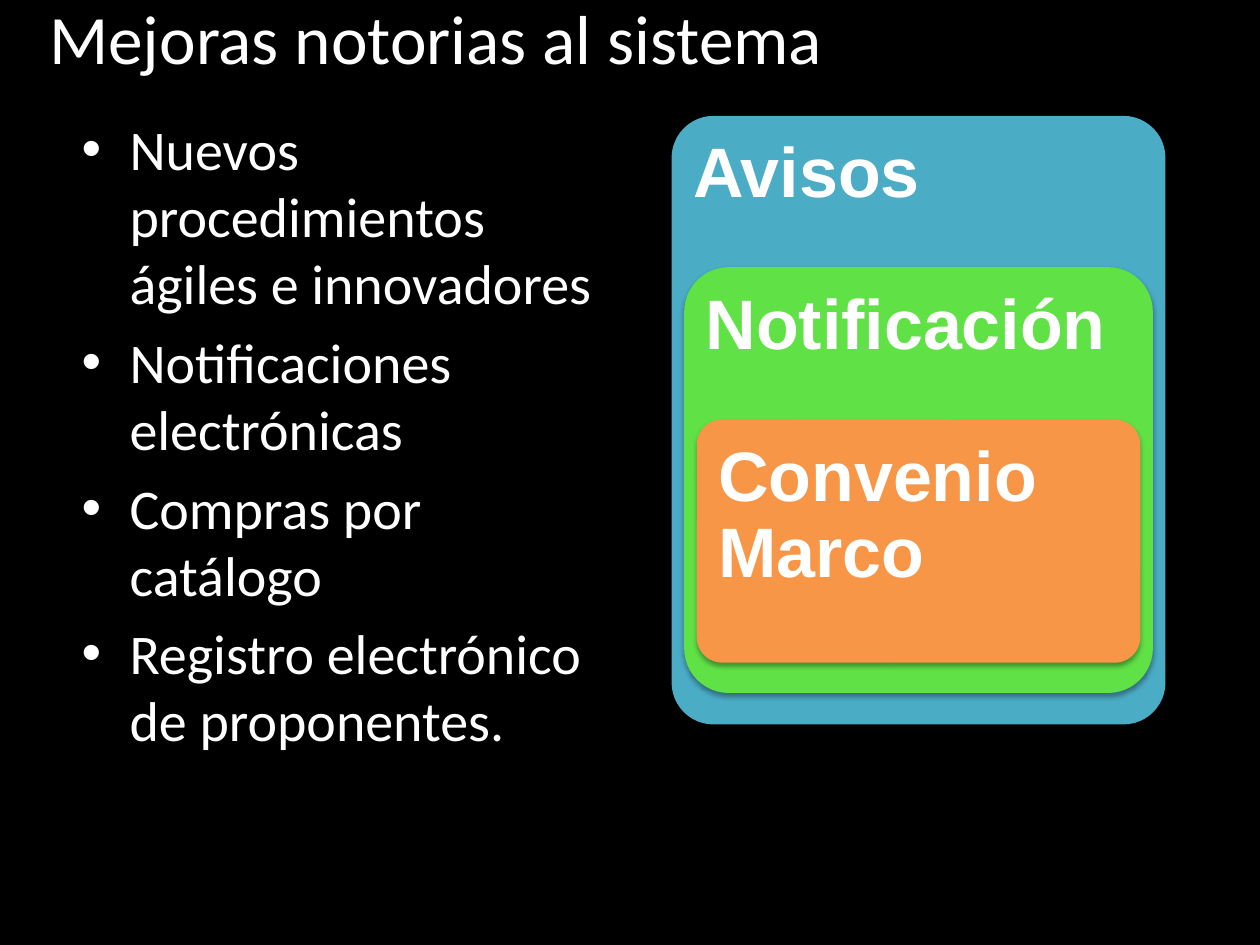
from lxml import etree
from pptx import Presentation
from pptx.dml.color import RGBColor
from pptx.enum import shapes, text
from pptx.oxml import ns
from pptx.util import Inches, Pt

COLORS = {
    "background": "000000",
    "text": "FFFFFF",
    "blue": "4BACC6",
    "green": "60E146",
    "orange": "F79646",
}
TITLE = "Mejoras notorias al sistema"
IMPROVEMENTS = [
    "Nuevos procedimientos ágiles e innovadores",
    "Notificaciones electrónicas",
    "Compras por catálogo",
    "Registro electrónico de proponentes.",
]
# label, colour, top, height, corner ratio
LAYERS = [
    ("Avisos", "blue", 0.92, 4.83, 0.085),
    ("Notificación", "green", 2.12, 3.38, 0.105),
    ("Convenio Marco", "orange", 3.33, 1.93, 0.105),
]
STACK_LEFT, STACK_WIDTH, LAYER_STEP = 5.33, 3.92, 0.1
LABEL_INSET = 0.17
CORNER_INSET = 0.29  # share of the corner radius kept clear of text
BULLET_INDENT = Inches(0.38)


def color(name):
    return RGBColor.from_string(COLORS[name])


def set_font(paragraph, **values):
    for name, value in values.items():
        setattr(paragraph.font, name, value)
    paragraph.font.color.rgb = color("text")


def add_text_box(slide, left, top, width, height, anchor):
    box = slide.shapes.add_textbox(*map(Inches, (left, top, width, height)))
    box.text_frame.word_wrap = True
    box.text_frame.vertical_anchor = anchor
    return box.text_frame


def add_bullet(paragraph):
    properties = paragraph._p.get_or_add_pPr()
    properties.set("marL", str(BULLET_INDENT))
    properties.set("indent", str(-BULLET_INDENT))
    etree.SubElement(properties, ns.qn("a:buFont"), typeface="Arial")
    etree.SubElement(properties, ns.qn("a:buChar"), char="•")


def add_shadow(shape):
    shape.shadow.inherit = False
    effects = shape._element.spPr.find(ns.qn("a:effectLst"))
    shadow = etree.SubElement(
        effects, ns.qn("a:outerShdw"), blurRad=str(Pt(3.1)),
        dist=str(Pt(1.8)), dir="5400000", rotWithShape="0")
    shade = etree.SubElement(shadow, ns.qn("a:srgbClr"), val="000000")
    etree.SubElement(shade, ns.qn("a:alpha"), val="35000")


def add_layer(slide, level, label, fill, top, height, corner):
    left = STACK_LEFT + level * LAYER_STEP
    width = STACK_WIDTH - 2 * level * LAYER_STEP
    shape = slide.shapes.add_shape(
        shapes.MSO_SHAPE.ROUNDED_RECTANGLE,
        *map(Inches, (left, top, width, height)))
    shape.adjustments[0] = corner
    shape.fill.solid()
    shape.fill.fore_color.rgb = color(fill)
    shape.line.fill.background()
    add_shadow(shape)

    frame = shape.text_frame
    frame.word_wrap = True
    frame.vertical_anchor = text.MSO_ANCHOR.TOP
    inset = LABEL_INSET - CORNER_INSET * corner * min(width, height)
    for side in ("left", "top", "right", "bottom"):
        setattr(frame, f"margin_{side}", Inches(inset))
    paragraph = frame.paragraphs[0]
    paragraph.text = label
    paragraph.alignment = text.PP_ALIGN.LEFT
    paragraph.line_spacing = 0.9
    set_font(paragraph, name="Arial", size=Pt(40), bold=True)


def main():
    presentation = Presentation()
    presentation.slide_width = Inches(10)
    presentation.slide_height = Inches(7.5)
    slide = presentation.slides.add_slide(presentation.slide_layouts[6])
    slide.background.fill.solid()
    slide.background.fill.fore_color.rgb = color("background")

    title = add_text_box(slide, 0, 0, 6.92, 0.58, text.MSO_ANCHOR.MIDDLE)
    title.text = TITLE
    title.paragraphs[0].alignment = text.PP_ALIGN.CENTER
    set_font(title.paragraphs[0], name="Calibri", size=Pt(39.6))

    for level, layer in enumerate(LAYERS):
        add_layer(slide, level, *layer)

    body = add_text_box(slide, 0.55, 0.86, 4.42, 5.5, text.MSO_ANCHOR.TOP)
    body.text = "\n".join(IMPROVEMENTS)
    for index, paragraph in enumerate(body.paragraphs):
        paragraph.space_before = Pt(6.4 if index else 0)
        add_bullet(paragraph)
        set_font(paragraph, name="Calibri", size=Pt(32))

    presentation.save("out.pptx")


if __name__ == "__main__":
    main()
